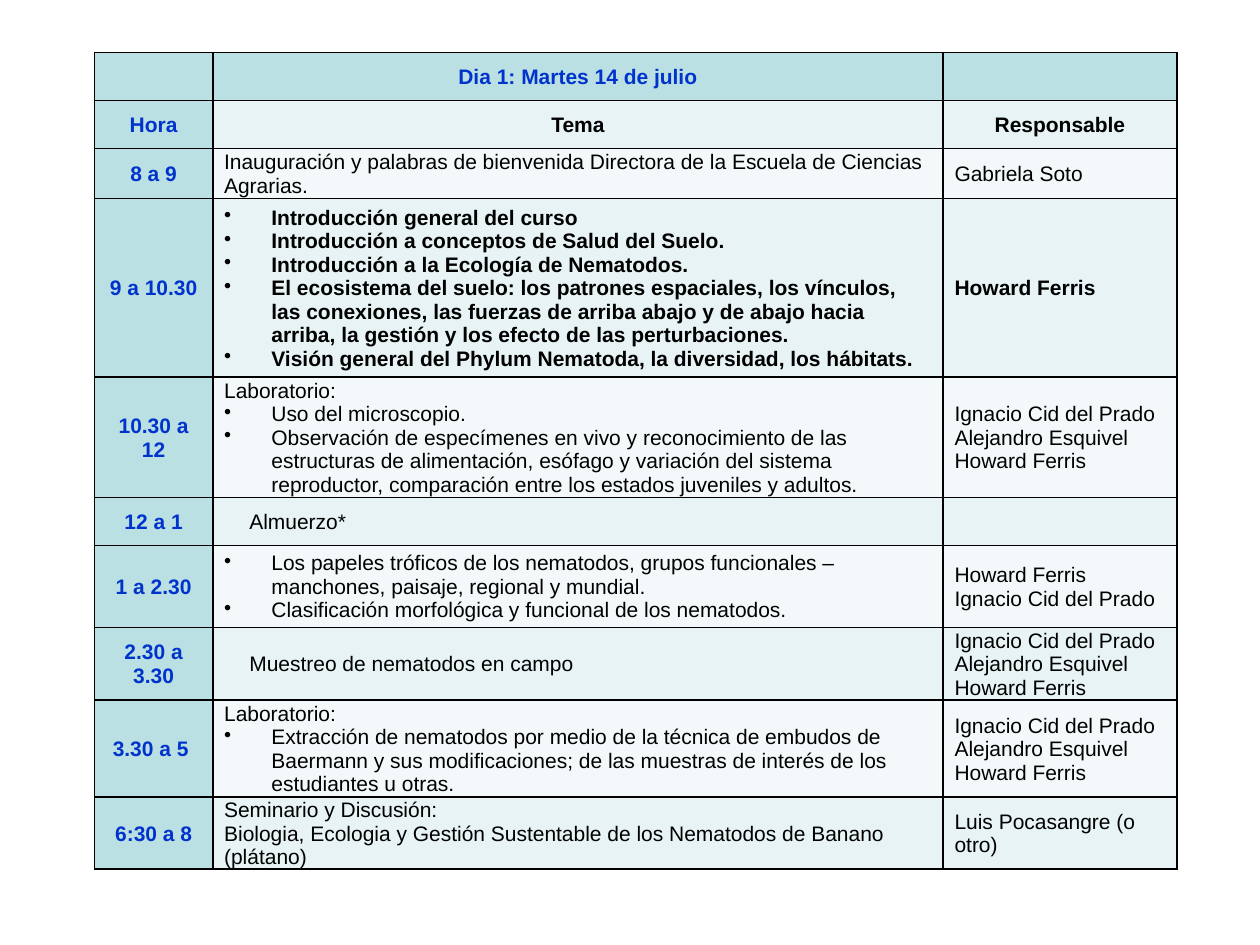
from lxml import etree
from pptx import Presentation
from pptx.dml.color import RGBColor
from pptx.enum import text
from pptx.oxml import ns
from pptx.util import Pt

BLUE, BLACK = "0033CC", "000000"
HEADER, DARK_BAND, LIGHT_BAND = "BBE0E3", "E7F3F4", "F3F9FA"
COLUMN_WIDTHS = (67.6, 417.4, 133.6)
BULLET, INDENT = "• ", "> "
FERRIS, CID, ESQUIVEL = "Howard Ferris", "Ignacio Cid del Prado", "Alejandro Esquivel"

AGENDA = [
    (27.4, "", ["Dia 1: Martes 14 de julio"], []),
    (27.4, "Hora", ["Tema"], ["Responsable"]),
    (28.6, "8 a 9",
     ["Inauguración y palabras de bienvenida Directora de la Escuela de Ciencias Agrarias."],
     ["Gabriela Soto"]),
    (102.2, "9 a 10.30",
     ["• Introducción general del curso",
      "• Introducción a conceptos de Salud del Suelo.",
      "• Introducción a la Ecología de Nematodos.",
      "• El ecosistema del suelo: los patrones espaciales, los vínculos, las conexiones, "
      "las fuerzas de arriba abajo y de abajo hacia arriba, la gestión y los efecto de "
      "las perturbaciones.",
      "• Visión general del Phylum Nematoda, la diversidad, los hábitats."],
     [FERRIS]),
    (68.8, "10.30 a 12",
     ["Laboratorio:",
      "• Uso del microscopio.",
      "• Observación de especímenes en vivo y reconocimiento de las estructuras de "
      "alimentación, esófago y variación del sistema reproductor, comparación entre los "
      "estados juveniles y adultos."],
     [CID, ESQUIVEL, FERRIS]),
    (27.4, "12 a 1", ["> Almuerzo*"], []),
    (46.8, "1 a 2.30",
     ["• Los papeles tróficos de los nematodos, grupos funcionales –manchones, paisaje, "
      "regional y mundial.",
      "• Clasificación morfológica y funcional de los nematodos."],
     [FERRIS, CID]),
    (41.6, "2.30 a 3.30", ["> Muestreo de nematodos en campo"], [CID, ESQUIVEL, FERRIS]),
    (55.4, "3.30 a 5 ",
     ["Laboratorio:",
      "• Extracción de nematodos por medio de la técnica de embudos de Baermann y sus "
      "modificaciones; de las muestras de interés de los estudiantes u otras."],
     [CID, ESQUIVEL, FERRIS]),
    (41.2, "6:30 a 8",
     ["Seminario y Discusión:",
      "Biologia, Ecologia y Gestión Sustentable de los Nematodos de Banano (plátano)"],
     ["Luis Pocasangre (o otro)"]),
]
TITLE_ROW, HEADING_ROW, KEYNOTE_ROW = 0, 1, 3


def color(hex_value):
    """Return the colour for a hex string."""
    return RGBColor.from_string(hex_value)


def add_borders(cell):
    """Draw a one-point black line on every side of a cell."""
    properties = cell._tc.get_or_add_tcPr()
    for side in ("a:lnL", "a:lnR", "a:lnT", "a:lnB"):
        line = etree.SubElement(properties, ns.qn(side), w=str(Pt(1)))
        fill = etree.SubElement(line, ns.qn("a:solidFill"))
        etree.SubElement(fill, ns.qn("a:srgbClr"), val=BLACK)


def add_bullet(paragraph):
    """Give a paragraph a hanging bullet."""
    properties = paragraph._p.get_or_add_pPr()
    properties.set("marL", str(Pt(27)))
    properties.set("indent", str(-Pt(27)))
    etree.SubElement(properties, ns.qn("a:buChar"), char="•")


def write_line(paragraph, line, centered, bold, ink):
    """Write one line of a cell, with the bullet or indent its mark asks for."""
    if line.startswith(BULLET):
        add_bullet(paragraph)
    elif line.startswith(INDENT):
        paragraph._p.get_or_add_pPr().set("marL", str(Pt(14.4)))
    paragraph.text = line.removeprefix(BULLET).removeprefix(INDENT)
    paragraph.alignment = text.PP_ALIGN.CENTER if centered else text.PP_ALIGN.LEFT
    font = paragraph.font
    font.name, font.size, font.bold = "Arial", Pt(12), bold
    font.color.rgb = color(ink)


def fill_cell(cell, lines, background, centered, bold, ink):
    """Format a cell and write its lines."""
    add_borders(cell)
    cell.fill.solid()
    cell.fill.fore_color.rgb = color(background)
    cell.vertical_anchor = text.MSO_ANCHOR.MIDDLE
    cell.margin_left = cell.margin_right = Pt(6.5)
    cell.margin_top, cell.margin_bottom = Pt(0.7), Pt(0)
    frame = cell.text_frame
    for index, line in enumerate(lines or [""]):
        paragraph = frame.add_paragraph() if index else frame.paragraphs[0]
        write_line(paragraph, line, centered, bold, ink)


def add_agenda(slide, left, top):
    """Add the agenda table with its corner at the given point."""
    heights = [row[0] for row in AGENDA]
    agenda = slide.shapes.add_table(
        len(AGENDA), len(COLUMN_WIDTHS), Pt(left), Pt(top),
        Pt(sum(COLUMN_WIDTHS)), Pt(sum(heights))).table
    for column, width in zip(agenda.columns, COLUMN_WIDTHS):
        column.width = Pt(width)
    for r, (height, hour, topics, speakers) in enumerate(AGENDA):
        agenda.rows[r].height = Pt(height)
        band = DARK_BAND if r % 2 else LIGHT_BAND
        for c, lines in enumerate(([hour], topics, speakers)):
            header = r == TITLE_ROW or c == 0
            fill_cell(
                agenda.cell(r, c), lines,
                background=HEADER if header else band,
                centered=header or r == HEADING_ROW,
                bold=header or r in (HEADING_ROW, KEYNOTE_ROW),
                ink=BLUE if header else BLACK)


def main():
    """Build the agenda slide."""
    deck = Presentation()
    deck.slide_width, deck.slide_height = Pt(720), Pt(540)
    slide = deck.slides.add_slide(deck.slide_layouts[6])
    add_agenda(slide, 54, 30)
    deck.save("out.pptx")


if __name__ == "__main__":
    main()
